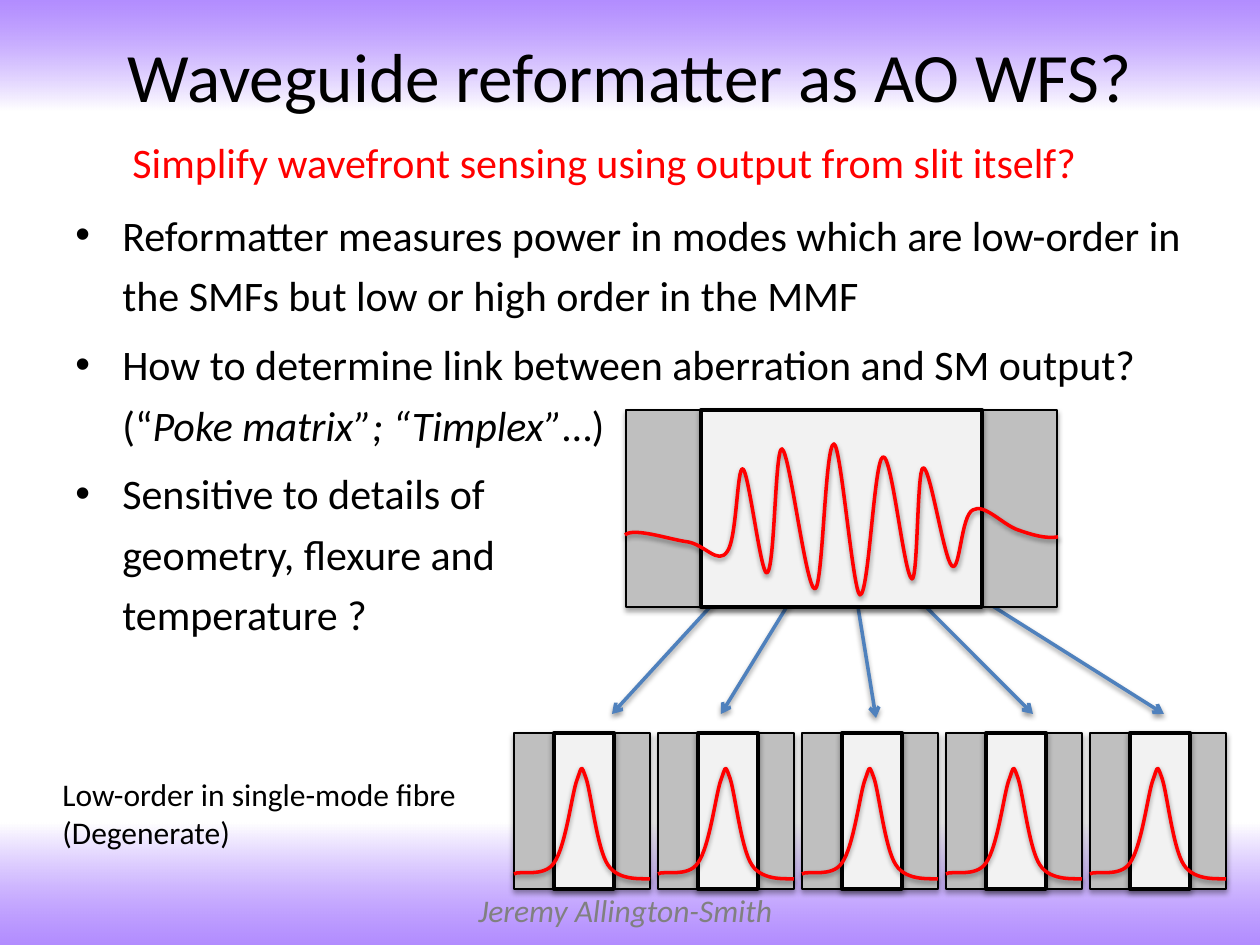
import pptx
import pptx.util
import pptx.dml.color
import pptx.enum.shapes
import pptx.enum.text
import pptx.oxml
import pptx.oxml.ns
from lxml import etree

EMU_PER_PX = 914400 / 126
FONT = "Calibri"
BLACK, RED, BLUE, GREY = "000000", "FF0000", "4F81BD", "808080"
CLADDING, CORE = "BFBFBF", "F2F2F2"
PURPLE, WHITE = "925CFF", "FFFFFF"
RECTANGLE = pptx.enum.shapes.MSO_SHAPE.RECTANGLE

# Each curve is a start point followed by triples of cubic control points.
SINGLE_MODE = [
    (0, 141), (5, 137), (30, 145), (40, 130), (52, 113), (58, 60), (63, 47),
    (68, 33), (67, 31), (72, 45), (77, 59), (83, 116), (94, 132),
    (105, 149), (131, 145), (136, 146)]
MULTI_MODE = [
    (-1, 125), (8, 117), (45, 130), (62, 132), (79, 135), (92, 155), (101, 142),
    (111, 130), (111, 55), (117, 59), (123, 63), (135, 166), (141, 163),
    (149, 160), (149, 37), (156, 39), (164, 43), (180, 180), (189, 179),
    (197, 178), (199, 33), (208, 34), (215, 35), (227, 183), (234, 185),
    (243, 186), (248, 49), (257, 47), (266, 44), (278, 166), (286, 169),
    (292, 170), (291, 60), (297, 58), (304, 55), (318, 150), (326, 156),
    (334, 163), (335, 105), (347, 100), (358, 93), (377, 115), (392, 120),
    (406, 125), (420, 129), (432, 127)]
ARROWS = [
    (721, 595, 612, 714), (794, 595, 721, 714), (914, 595, 1033, 714),
    (975, 595, 1164, 714), (858, 607, 876, 718)]
BULLETS = [
    [("Reformatter measures power in modes which are low-order in the SMFs "
      "but low or high order in the MMF", False)],
    [("How to determine link between aberration and SM output? (“", False),
     ("Poke matrix”; “Timplex”", True), ("…)", False)],
    [("Sensitive to details of\vgeometry, flexure and\vtemperature ?", False)]]


def px(*lengths):
    return [pptx.util.Emu(round(length * EMU_PER_PX)) for length in lengths]


def colour(value):
    return pptx.dml.color.RGBColor.from_string(value)


def child(parent, name, **attributes):
    """Append a DrawingML element to parent."""
    return etree.SubElement(parent, pptx.oxml.ns.qn("a:" + name), attributes)


def set_line(shape, value, width):
    shape.line.color.rgb = colour(value)
    shape.line.width = pptx.util.Pt(width)


def add_shadow(shape, distance, opacity):
    """Drop a soft black shadow straight down; call once the line is set."""
    effects = child(shape.element.spPr, "effectLst")
    shadow = child(effects, "outerShdw", blurRad=str(pptx.util.Pt(3.1)),
                   dist=str(pptx.util.Pt(distance)), dir="5400000",
                   rotWithShape="0")
    black = child(shadow, "srgbClr", val=BLACK)
    child(black, "alpha", val=str(opacity * 1000))


def add_band(page, top, height, angle):
    """Full-width band fading from purple to white."""
    band = page.shapes.add_shape(RECTANGLE, *px(0, top, 1260, height))
    band.shadow.inherit = False
    band.line.fill.background()
    band.fill.gradient()
    band.fill.gradient_angle = angle
    for stop, value in zip(band.fill.gradient_stops, (PURPLE, WHITE)):
        stop.color.rgb = colour(value)
    first = next(band.element.spPr.iter(pptx.oxml.ns.qn("a:srgbClr")))
    child(first, "alpha", val="70000")


def add_text(page, box, lines, size, value=BLACK, italic=False, wrap=False):
    frame = page.shapes.add_textbox(*px(*box)).text_frame
    frame.word_wrap = wrap
    frame.text = "\n".join(lines)
    for para in frame.paragraphs:
        style_font(para, size, value)
        para.font.italic = italic
    return frame


def style_font(para, size, value):
    para.font.name = FONT
    para.font.size = pptx.util.Pt(size)
    para.font.color.rgb = colour(value)


def add_title(page, box, text):
    frame = add_text(page, box, [text], 39.6, wrap=True)
    frame.vertical_anchor = pptx.enum.text.MSO_ANCHOR.MIDDLE
    frame.paragraphs[0].alignment = pptx.enum.text.PP_ALIGN.CENTER


def add_bullets(page, box, items):
    frame = page.shapes.add_textbox(*px(*box)).text_frame
    frame.word_wrap = True
    indent = px(47)[0]
    for index, spans in enumerate(items):
        para = frame.add_paragraph() if index else frame.paragraphs[0]
        para.line_spacing = 1.2
        if index:
            para.space_before = pptx.util.Pt(4.8)
        properties = para._p.get_or_add_pPr()
        properties.set("marL", str(indent))
        properties.set("indent", str(-indent))
        child(properties, "buFont", typeface="Arial")
        child(properties, "buChar", char="•")
        style_font(para, 24, BLACK)
        for text, italic in spans:
            for number, line in enumerate(text.split("\v")):
                if number:
                    para.add_line_break()
                span = para.add_run()
                span.text = line
                if italic:
                    span.font.italic = True


def add_curve(group, left, top, points):
    """Draw a red cubic curve with its points relative to left, top."""
    placed = [(left + x, top + y) for x, y in points]
    builder = group.shapes.build_freeform(*placed[0], scale=EMU_PER_PX)
    builder.add_line_segments(placed[1:], close=False)
    curve = builder.convert_to_shape()
    steps = list(curve.element.iter(pptx.oxml.ns.qn("a:lnTo")))
    outline = steps[0].getparent()
    for start in range(0, len(steps), 3):
        bezier = child(outline, "cubicBezTo")
        for step in steps[start:start + 3]:
            bezier.append(step[0])
            outline.remove(step)
    curve.fill.background()
    set_line(curve, RED, 2)
    add_shadow(curve, 1.6, 38)


def add_fibre(page, box, core_left, core_width, points):
    """Fibre section: cladding, core and the mode profile across both."""
    left, top, width, height = box
    group = page.shapes.add_group_shape()
    layers = [(left, width, CLADDING, 1.5),
              (left + core_left, core_width, CORE, 2.25)]
    for x, layer_width, fill, weight in layers:
        layer = group.shapes.add_shape(
            RECTANGLE, *px(x, top, layer_width, height))
        layer.fill.solid()
        layer.fill.fore_color.rgb = colour(fill)
        set_line(layer, BLACK, weight)
        add_shadow(layer, 1.8, 35)
    add_curve(group, left, top, points)


def add_arrow(page, ends):
    arrow = page.shapes.add_connector(
        pptx.enum.shapes.MSO_CONNECTOR.STRAIGHT, *px(*ends))
    set_line(arrow, BLUE, 2)
    child(arrow.line._get_or_add_ln(), "tailEnd", type="arrow")
    add_shadow(arrow, 1.6, 38)


def main():
    deck = pptx.Presentation()
    deck.slide_width, deck.slide_height = px(1260, 945)
    page = deck.slides.add_slide(deck.slide_layouts[6])

    add_band(page, 823, 122, 90)
    add_band(page, 0, 111, 270)
    add_text(page, (466, 885, 331, 50), ["Jeremy Allington-Smith"], 18, GREY,
             italic=True)
    add_title(page, (63, -4, 1134, 158), "Waveguide reformatter as AO WFS?")
    add_bullets(page, (63, 193, 1173, 668), BULLETS)
    add_text(page, (50, 769, 425, 89),
             ["Low-order in single-mode fibre", "(Degenerate)"], 18)
    for index in range(5):
        add_fibre(page, (514 + 144 * index, 733, 136, 156), 40, 60, SINGLE_MODE)
    for ends in ARROWS:
        add_arrow(page, ends)
    add_fibre(page, (626, 410, 431, 197), 75, 281, MULTI_MODE)
    add_text(page, (120, 130, 983, 63),
             ["Simplify wavefront sensing using output from slit itself?"],
             24, RED)
    deck.save("out.pptx")


if __name__ == "__main__":
    main()
